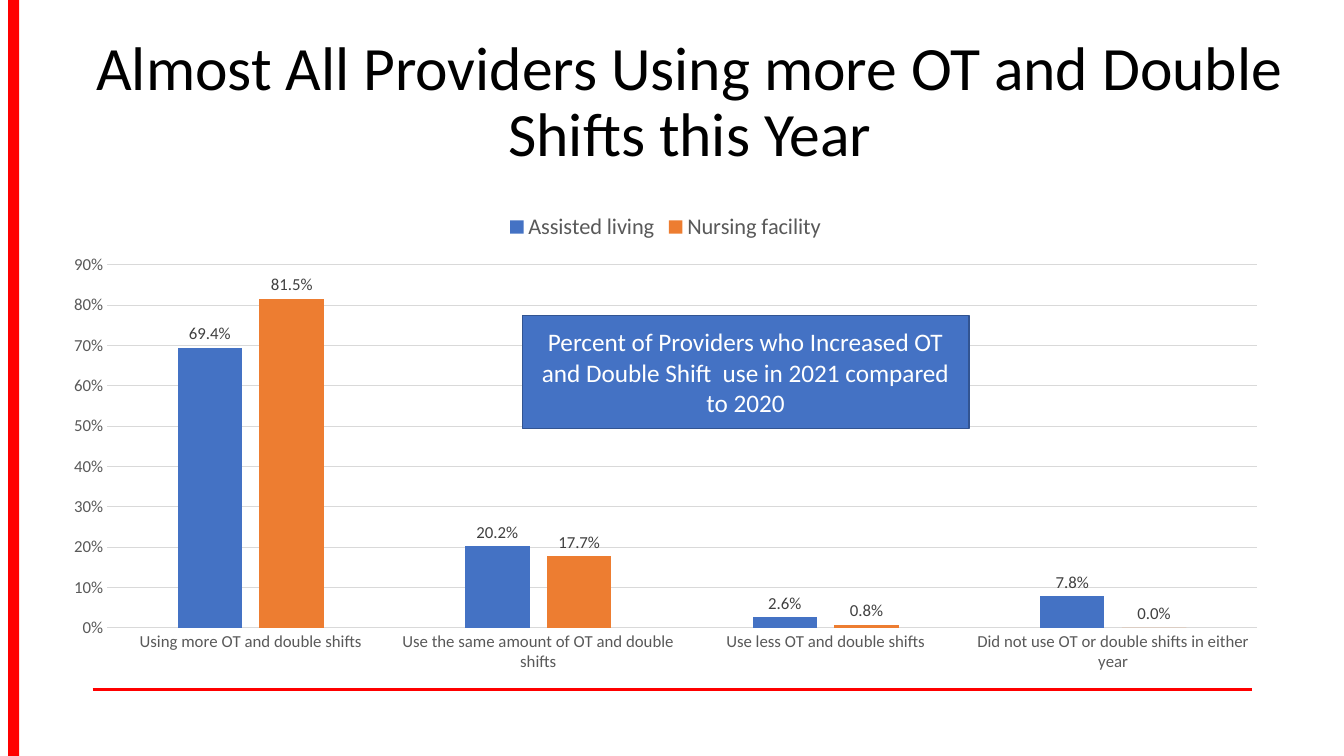
from pptx import Presentation
from pptx.chart.data import CategoryChartData
from pptx.dml.color import RGBColor
from pptx.enum.chart import XL_CHART_TYPE as ChartType, XL_LABEL_POSITION as LabelPosition
from pptx.enum.chart import XL_LEGEND_POSITION as LegendPosition, XL_TICK_MARK as TickMark
from pptx.enum.shapes import MSO_CONNECTOR as Connector, MSO_SHAPE as Shape
from pptx.enum.text import MSO_ANCHOR as Anchor, PP_ALIGN as Align
from pptx.oxml.ns import qn
from pptx.util import Inches, Pt

FONT = "Calibri"
COLORS = {
    "accent": "FF0000", "title": "000000", "axis": "595959", "grid": "D9D9D9",
    "label": "404040", "callout": "4472C4", "callout_edge": "325491", "white": "FFFFFF",
    "Assisted living": "4472C4", "Nursing facility": "ED7D31",
}
TITLE = "Almost All Providers Using more OT and Double Shifts this Year"
CALLOUT = "Percent of Providers who Increased OT and Double Shift  use in 2021 compared to 2020"
CATEGORIES = [
    "Using more OT and double shifts",
    "Use the same amount of OT and double shifts",
    "Use less OT and double shifts",
    "Did not use OT or double shifts in either year",
]
SERIES = {
    "Assisted living": (0.694, 0.202, 0.026, 0.078),
    "Nursing facility": (0.815, 0.177, 0.008, 0),
}


def color(name):
    return RGBColor.from_string(COLORS[name])


def inches(*lengths):
    return [Inches(length) for length in lengths]


def style_font(font, size, name):
    font.name = FONT
    font.size = Pt(size)
    font.color.rgb = color(name)


def style_line(line, name, width):
    line.color.rgb = color(name)
    line.width = Pt(width)


def write(box, text, size, name, line_spacing=1.0):
    """Put one centred paragraph in the middle of a box."""
    frame = box.text_frame
    frame.word_wrap = True
    frame.vertical_anchor = Anchor.MIDDLE
    para = frame.paragraphs[0]
    para.alignment = Align.CENTER
    para.line_spacing = line_spacing
    span = para.add_run()
    span.text = text
    style_font(span.font, size, name)


def add_box(page, area, fill):
    box = page.shapes.add_shape(Shape.RECTANGLE, *inches(*area))
    box.shadow.inherit = False
    box.fill.solid()
    box.fill.fore_color.rgb = color(fill)
    box.line.fill.background()
    return box


def add_rule(page, start, end):
    rule = page.shapes.add_connector(Connector.STRAIGHT, *inches(*start, *end))
    style_line(rule.line, "accent", 2)
    properties = rule._element.spPr
    properties.append(properties.makeelement(qn("a:effectLst"), {}))


def add_provider_chart(page, area):
    data = CategoryChartData(number_format="0.0%")
    data.categories = CATEGORIES
    for name, values in SERIES.items():
        data.add_series(name, values)
    chart = page.shapes.add_chart(ChartType.COLUMN_CLUSTERED, *inches(*area), data).chart
    style_font(chart.font, 10, "title")
    chart.has_title = False
    chart.has_legend = True
    chart.legend.position = LegendPosition.TOP
    chart.legend.include_in_layout = False
    style_font(chart.legend.font, 16, "axis")

    for axis in (chart.category_axis, chart.value_axis):
        axis.major_tick_mark = axis.minor_tick_mark = TickMark.NONE
        style_font(axis.tick_labels.font, 12, "axis")
    style_line(chart.category_axis.format.line, "grid", 0.75)
    percent = chart.value_axis
    percent.minimum_scale, percent.maximum_scale, percent.major_unit = 0, 0.9, 0.1
    percent.tick_labels.number_format = "0%"
    percent.tick_labels.number_format_is_linked = False
    percent.format.line.fill.background()
    style_line(percent.major_gridlines.format.line, "grid", 0.75)

    plot = chart.plots[0]
    plot.gap_width, plot.overlap = 219, -27
    plot.vary_by_categories = False
    for series in plot.series:
        series.invert_if_negative = False
        series.format.fill.solid()
        series.format.fill.fore_color.rgb = color(series.name)
        labels = series.data_labels
        labels.show_value = True
        labels.position = LabelPosition.OUTSIDE_END
        labels.number_format = "0.0%"
        labels.number_format_is_linked = False
        style_font(labels.font, 12, "label")


def main():
    deck = Presentation()
    deck.slide_width, deck.slide_height = inches(13.33, 7.5)
    page = deck.slides.add_slide(deck.slide_layouts[6])

    add_rule(page, (0.92, 6.84), (12.42, 6.84))
    add_box(page, (0.08, 0, 0.11, 7.5), "accent")
    title = page.shapes.add_textbox(*inches(0.8, 0.3, 12.09, 1.45))
    write(title, TITLE, 44, "title", line_spacing=0.9)
    add_provider_chart(page, (0.49, 2, 12.22, 4.76))
    callout = add_box(page, (5.18, 3.13, 4.43, 1.12), "callout")
    style_line(callout.line, "callout_edge", 1)
    write(callout, CALLOUT, 18, "white")

    deck.save("out.pptx")


if __name__ == "__main__":
    main()
